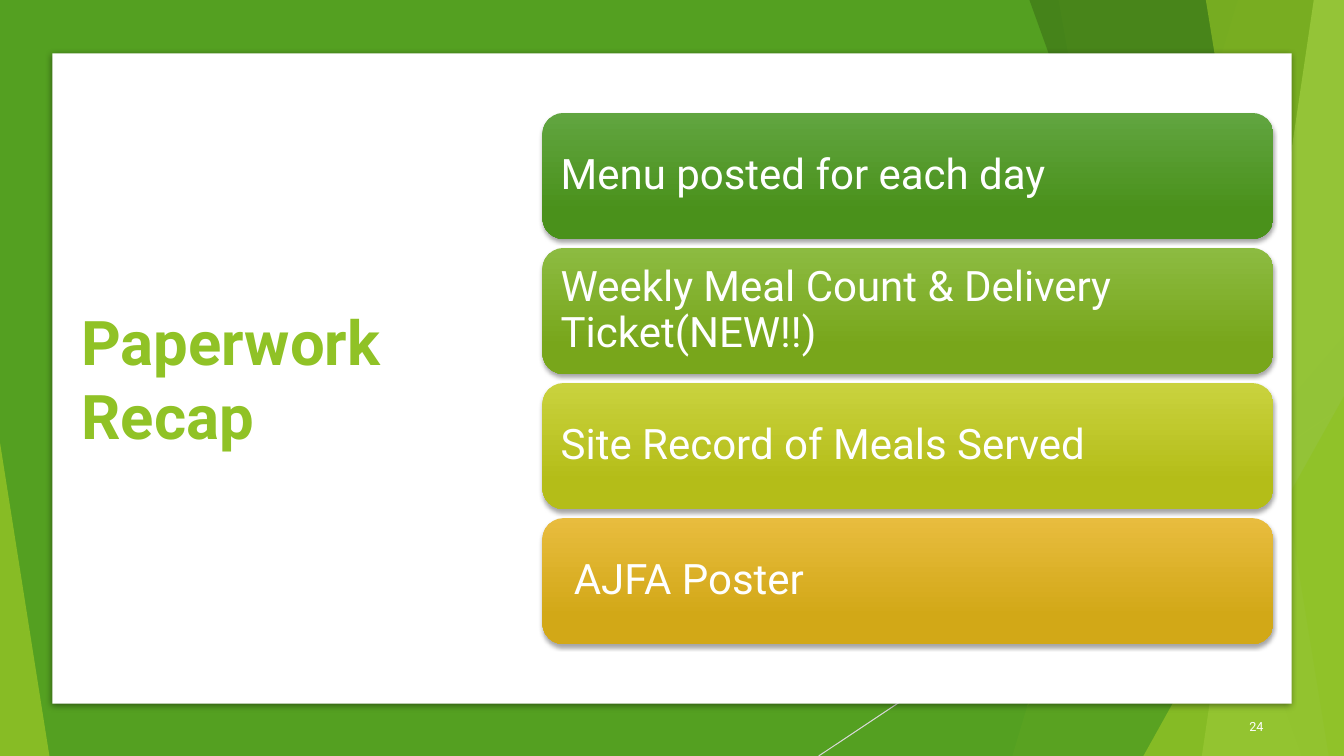
from lxml import etree
from pptx import Presentation
from pptx.dml.color import RGBColor
from pptx.enum.shapes import MSO_CONNECTOR, MSO_SHAPE
from pptx.enum.text import MSO_ANCHOR, PP_ALIGN
from pptx.oxml.ns import qn
from pptx.util import Inches, Pt

RECTANGLE, ROUNDED, TRIANGLE = MSO_SHAPE.RECTANGLE, MSO_SHAPE.ROUNDED_RECTANGLE, MSO_SHAPE.ISOSCELES_TRIANGLE
STRAIGHT = MSO_CONNECTOR.STRAIGHT
MIDDLE = MSO_ANCHOR.MIDDLE
LEFT, RIGHT = PP_ALIGN.LEFT, PP_ALIGN.RIGHT

WIDTH, HEIGHT = 13.33, 7.5
COLORS = {
    "white": "FFFFFF", "black": "000000", "green": "54A021", "lime": "90C226",
    "forest": "3F7818", "pale": "BFE471", "gray": "D8D8D8",
}
FACETS = [
    ("band", 12.28, 10.04, "lime", 30),
    ("band", 10.5, 11.83, "lime", 20),
    ("triangle", (9.77, 3.33, 3.56, 4.17), 1, "green", 72),
    ("band", 10.21, 12.91, "forest", 70),
    ("band", 13.03, 11.92, "pale", 70),
    ("band", 11.96, 13.18, "lime", 65),
    ("triangle", (11.34, 3.93, 1.99, 3.57), 1, "lime", 80),
    ("triangle", (0, 4.39, 0.49, 3.11), 0, "lime", 85),
]
CARDS = [
    ("Menu posted for each day", "61A540", "4A911B", 0.12),
    ("Weekly Meal Count & Delivery Ticket(NEW!!)", "8CBB41", "78A61B", 0.12),
    ("Site Record of Meals Served", "C9D23E", "B4BD18", 0.12),
    ("AJFA Poster", "E8BC3E", "D2A817", 0.25),
]
CARD_TOP, CARD_STEP = 1.12, 1.34


class SlideBuilder:
    font = "Roboto"

    def __init__(self, page):
        self.page = page

    def finish(self, shape, color=None, alpha=100):
        if color:
            shape.fill.solid()
            shape.fill.fore_color.rgb = RGBColor.from_string(COLORS[color])
            if alpha < 100:
                tint = shape._element.spPr.find(qn("a:solidFill"))[0]
                etree.SubElement(tint, qn("a:alpha"), val=str(alpha * 1000))
        shape.line.fill.background()
        shape.shadow.inherit = False
        return shape

    def shape(self, kind, place, color=None, alpha=100, adjust=None):
        shape = self.page.shapes.add_shape(kind, *map(Inches, place))
        if adjust is not None:
            shape.adjustments[0] = adjust
        return self.finish(shape, color, alpha)

    def band(self, top_x, bottom_x, color, alpha):
        corners = [(WIDTH, 0), (WIDTH, HEIGHT), (bottom_x, HEIGHT)]
        outline = self.page.shapes.build_freeform(Inches(top_x), 0)
        outline.add_line_segments([(Inches(x), Inches(y)) for x, y in corners], close=True)
        self.finish(outline.convert_to_shape(), color, alpha)

    def triangle(self, place, apex, color, alpha):
        self.shape(TRIANGLE, place, color, alpha, apex)

    def line(self, start, end, color, width):
        line = self.page.shapes.add_connector(STRAIGHT, *map(Inches, start + end))
        line.line.color.rgb = RGBColor.from_string(COLORS[color])
        line.line.width = Pt(width)
        etree.SubElement(line._element.spPr, qn("a:effectLst"))

    def shadow(self, shape, alpha, blur, distance):
        effects = shape._element.spPr.find(qn("a:effectLst"))
        outer = etree.SubElement(effects, qn("a:outerShdw"), blurRad=str(Pt(blur)),
                                 dist=str(Pt(distance)), dir="5400000", rotWithShape="0")
        tint = etree.SubElement(outer, qn("a:srgbClr"), val=COLORS["black"])
        etree.SubElement(tint, qn("a:alpha"), val=str(alpha * 1000))

    def label(self, box, text, size, color, bold=False, align=LEFT, spacing=1.0, inset=(0.1, 0.05)):
        frame = box.text_frame
        side, edge = map(Inches, inset)
        layout = {"word_wrap": True, "vertical_anchor": MIDDLE, "margin_left": side,
                  "margin_right": side, "margin_top": edge, "margin_bottom": edge}
        for name, value in layout.items():
            setattr(frame, name, value)
        para = frame.paragraphs[0]
        para.alignment, para.line_spacing = align, spacing
        span = para.add_run()
        span.text = text
        for name, value in {"name": self.font, "size": Pt(size), "bold": bold}.items():
            setattr(span.font, name, value)
        span.font.color.rgb = RGBColor.from_string(COLORS[color])

    def text(self, place, text, size, color, **style):
        box = self.page.shapes.add_textbox(*map(Inches, place))
        self.label(box, text, size, color, **style)

    def card(self, place, text, light, dark, indent):
        card = self.shape(ROUNDED, place, adjust=0.167)
        card.fill.gradient()
        card.fill.gradient_angle = 270
        for stop, color, position in zip(card.fill.gradient_stops, (light, dark), (0, 0.78)):
            stop.color.rgb = RGBColor.from_string(color)
            stop.position = position
        self.shadow(card, 35, 3, 2)
        self.label(card, text, 30, "white", spacing=0.9, inset=(indent, 0.12))


def main():
    deck = Presentation()
    deck.slide_width, deck.slide_height = Inches(WIDTH), Inches(HEIGHT)
    builder = SlideBuilder(deck.slides.add_slide(deck.slide_layouts[6]))

    builder.shape(RECTANGLE, (0, 0, WIDTH, HEIGHT), "green")
    builder.line((WIDTH, 4.03), (8.12, HEIGHT), "gray", 0.75)
    for kind, *facet in FACETS:
        draw = builder.band if kind == "band" else builder.triangle
        draw(*facet)

    panel = builder.shape(RECTANGLE, (0.52, 0.53, 12.29, 6.45), "white")
    builder.shadow(panel, 43, 5, 1.4)
    builder.text((11.88, 7.01, 0.75, 0.4), "24", 9, "white", align=RIGHT)
    builder.text((0.71, 1.51, 3.88, 4.48), "Paperwork Recap", 44, "lime", bold=True)
    for index, card in enumerate(CARDS):
        builder.card((5.38, CARD_TOP + index * CARD_STEP, 7.25, 1.25), *card)

    deck.save("out.pptx")


if __name__ == "__main__":
    main()
